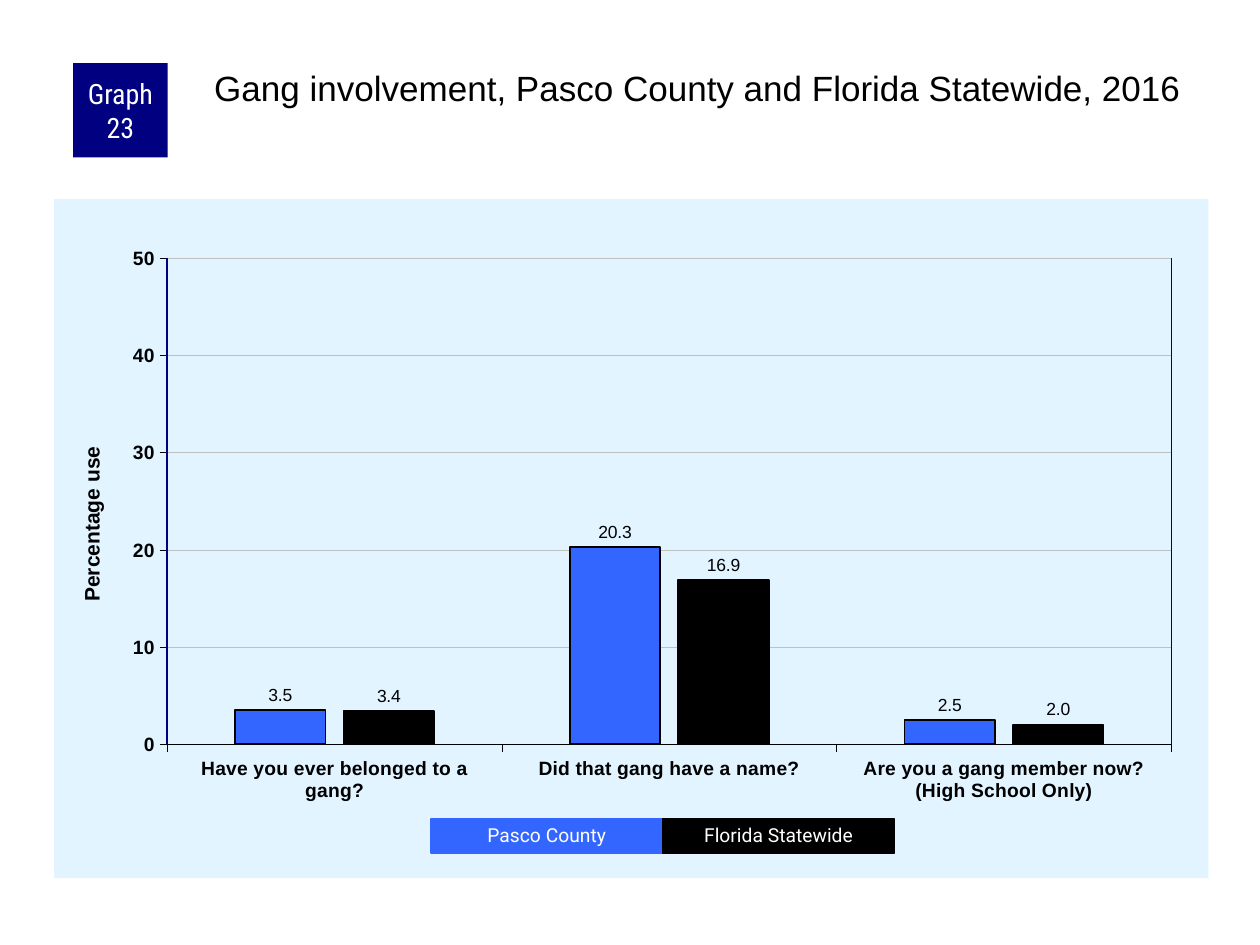
from lxml.etree import SubElement
from pptx import Presentation
from pptx.chart.data import CategoryChartData
from pptx.dml.color import RGBColor
from pptx.enum.chart import XL_CHART_TYPE, XL_LABEL_POSITION, XL_TICK_MARK
from pptx.enum.shapes import MSO_CONNECTOR, MSO_SHAPE
from pptx.enum.text import MSO_ANCHOR, MSO_AUTO_SIZE, PP_ALIGN
from pptx.oxml import parse_xml
from pptx.oxml.ns import nsdecls, qn
from pptx.util import Inches, Pt

BLACK = RGBColor(0, 0, 0)
WHITE = RGBColor(255, 255, 255)
NAVY = RGBColor(0, 0, 0x80)
BLUE = RGBColor(0x33, 0x66, 0xFF)
PALE = RGBColor(0xE1, 0xF4, 0xFF)
GRAY = RGBColor(0xC0, 0xC0, 0xC0)

TITLE = "Gang involvement, Pasco County and Florida Statewide, 2016"
BADGE = "Graph 23"
AXIS = "Percentage use"
CATS = [
    "Have you ever belonged to a gang?",
    "Did that gang have a name?",
    "Are you a gang member now?\n(High School Only)",
]
SERIES = [
    ("Pasco County", (3.5, 20.3, 2.5), BLUE),
    ("Florida Statewide", (3.4, 16.9, 2.0), BLACK),
]
BOX = (0.43, 1.58, 9.16, 5.39)
PLOT = {"x": 0.098, "y": 0.087, "w": 0.87, "h": 0.716}


def style(font, size, color=BLACK, face="Arial", bold=False):
    font.size, font.name, font.bold = Pt(size), face, bold
    font.color.rgb = color


def write(frame, text, size, color=BLACK, face="Arial", bold=False,
          align=PP_ALIGN.CENTER, anchor=MSO_ANCHOR.MIDDLE,
          inset=(0.05, 0, 0.05, 0), space=1.0):
    frame.word_wrap = True
    frame.auto_size = MSO_AUTO_SIZE.NONE
    frame.vertical_anchor = anchor
    (frame.margin_left, frame.margin_top,
     frame.margin_right, frame.margin_bottom) = map(Inches, inset)
    para = frame.paragraphs[0]
    para.alignment, para.line_spacing = align, space
    run = para.add_run()
    run.text = text
    style(run.font, size, color, face, bold)


def block(slide, box, color, edge=False):
    shape = slide.shapes.add_shape(MSO_SHAPE.RECTANGLE, *map(Inches, box))
    shape.shadow.inherit = False
    shape.fill.solid()
    shape.fill.fore_color.rgb = color
    if edge:
        shape.line.color.rgb, shape.line.width = color, Pt(0.75)
    else:
        shape.line.fill.background()
    return shape.text_frame


def stroke(line, color, width):
    line.color.rgb, line.width = color, Pt(width)


def fit_plot(chart):
    area = chart._chartSpace.chart.plotArea
    for old in area.findall(qn("c:layout")):
        area.remove(old)
    modes = "".join(f'<c:{k}Mode val="edge"/>' for k in "xy")
    sizes = "".join(f'<c:{k} val="{v}"/>' for k, v in PLOT.items())
    area.insert(0, parse_xml(
        f'<c:layout {nsdecls("c")}><c:manualLayout>'
        f'<c:layoutTarget val="inner"/>{modes}{sizes}'
        '</c:manualLayout></c:layout>'))


def fill_back(chart):
    props = parse_xml(
        f'<c:spPr {nsdecls("c", "a")}><a:solidFill><a:srgbClr val="{PALE}"/>'
        '</a:solidFill><a:ln><a:noFill/></a:ln></c:spPr>')
    chart._chartSpace.chart.addnext(props)


def add_bars(slide):
    data = CategoryChartData(number_format="0.0")
    data.categories = CATS
    for name, vals, _ in SERIES:
        data.add_series(name, vals)
    chart = slide.shapes.add_chart(
        XL_CHART_TYPE.COLUMN_CLUSTERED, *map(Inches, BOX), data).chart
    style(chart.font, 11.5)
    chart.has_legend = chart.has_title = False
    fit_plot(chart)
    fill_back(chart)

    for axis in (chart.category_axis, chart.value_axis):
        style(axis.tick_labels.font, 11, bold=True)
        axis.major_tick_mark = XL_TICK_MARK.OUTSIDE
        axis.minor_tick_mark = XL_TICK_MARK.NONE
        stroke(axis.format.line, BLACK, 0.25)
    axis = chart.value_axis
    axis.minimum_scale, axis.maximum_scale, axis.major_unit = 0, 50, 10
    axis.tick_labels.number_format = "0"
    axis.tick_labels.number_format_is_linked = False
    stroke(axis.major_gridlines.format.line, GRAY, 0.25)
    para = axis.axis_title.text_frame.paragraphs[0]
    run = para.add_run()
    run.text = AXIS
    style(run.font, 12, bold=True)

    plot = chart.plots[0]
    plot.gap_width, plot.overlap = 150, -20
    plot.vary_by_categories = False
    for bars, (_, _, color) in zip(plot.series, SERIES):
        bars.format.fill.solid()
        bars.format.fill.fore_color.rgb = color
        stroke(bars.format.line, BLACK, 1)
        tags = bars.data_labels
        tags.show_value = True
        tags.number_format, tags.number_format_is_linked = "0.0", False
        tags.position = XL_LABEL_POSITION.OUTSIDE_END
        style(tags.font, 10)


def add_sides(slide):
    left, top, wide, high = BOX
    y = top + PLOT["y"] * high
    for part in (PLOT["x"], PLOT["x"] + PLOT["w"]):
        x = left + part * wide
        ends = (x, y, x, y + PLOT["h"] * high)
        side = slide.shapes.add_connector(
            MSO_CONNECTOR.STRAIGHT, *map(Inches, ends))
        stroke(side.line, NAVY, 1)
        SubElement(side._element.spPr, qn("a:effectLst"))


def main():
    deck = Presentation()
    deck.slide_width, deck.slide_height = Inches(10), Inches(7.5)
    slide = deck.slides.add_slide(deck.slide_layouts[5])
    add_bars(slide)
    add_sides(slide)
    write(block(slide, (0.58, 0.5, 0.75, 0.75), NAVY), BADGE, 16,
          color=WHITE, face="Roboto Condensed")

    title = slide.shapes.title
    title.left, title.top = Inches(1.67), Inches(0.5)
    title.width, title.height = Inches(7.92), Inches(0.83)
    write(title.text_frame, TITLE, 20, align=PP_ALIGN.LEFT,
          anchor=MSO_ANCHOR.TOP, inset=(0.03, 0.03, 0, 0))

    wide = 1.84
    for i, (name, _, color) in enumerate(SERIES):
        key = block(slide, (3.42 + i * wide, 6.5, wide, 0.27), color, edge=True)
        write(key, name, 11, color=WHITE, face="Roboto", space=0.9)
    deck.save("out.pptx")


if __name__ == "__main__":
    main()
